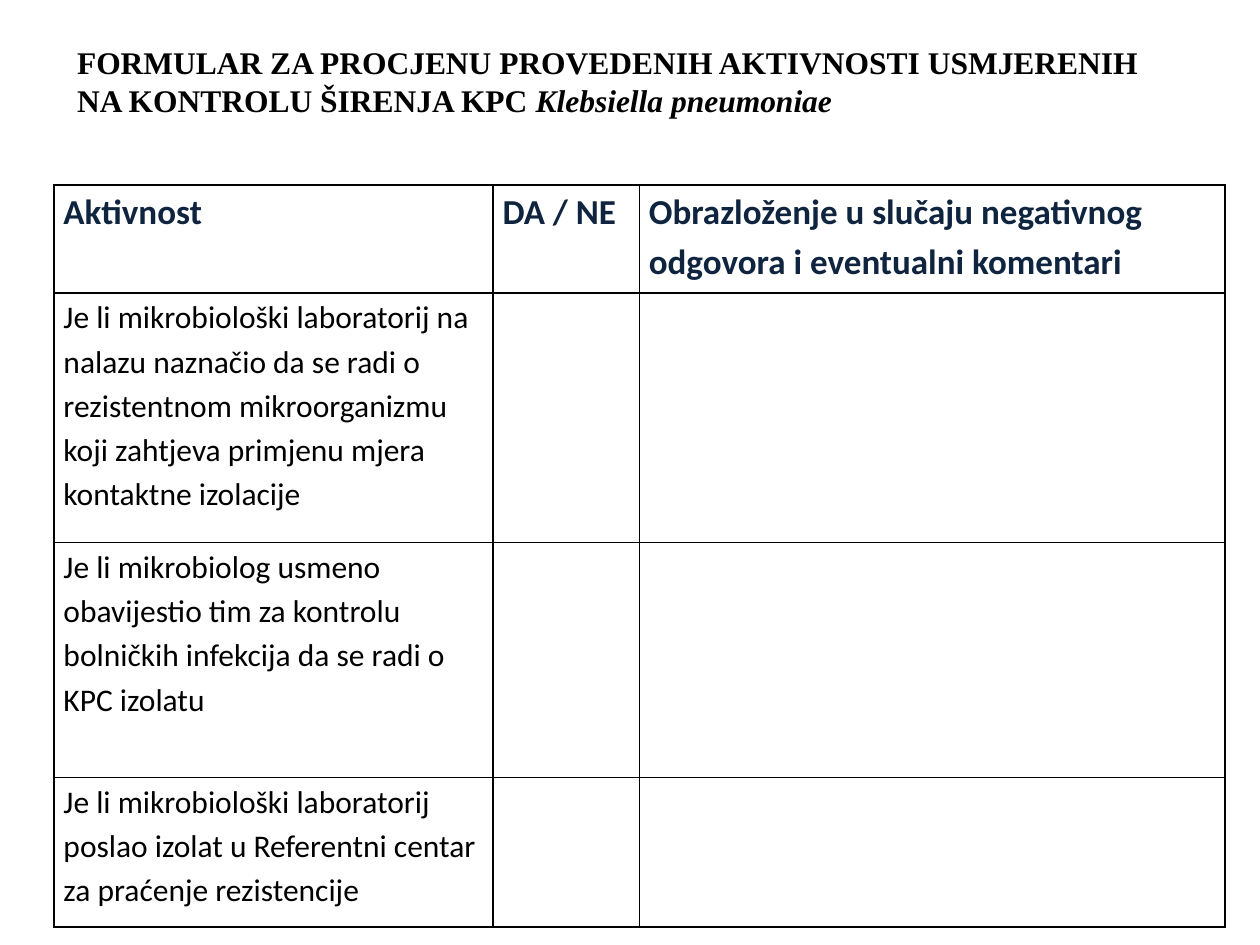
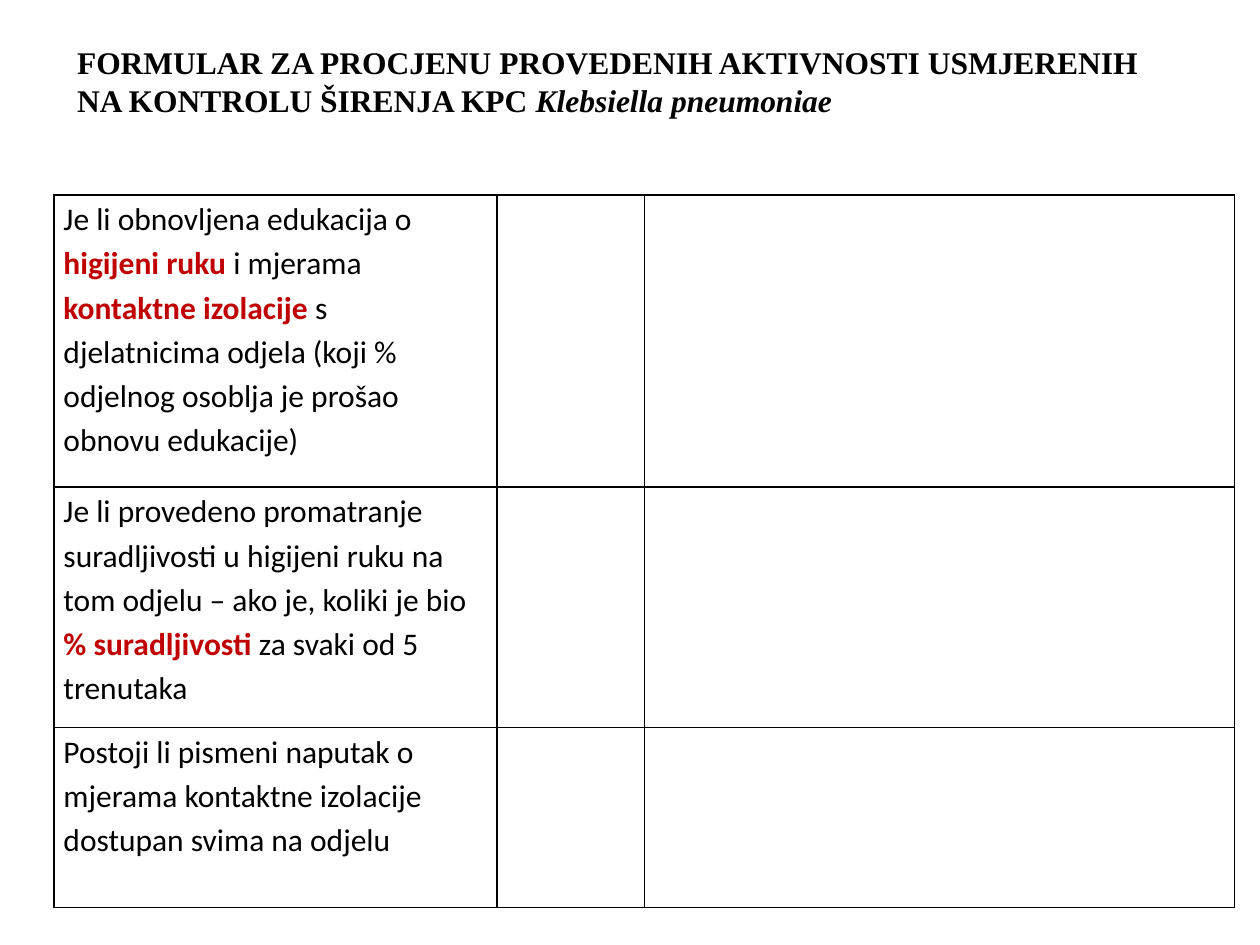
"""Build a two-slide form for assessing infection control measures."""
from lxml import etree
from pptx import Presentation
from pptx import util as u
from pptx.dml.color import RGBColor
from pptx.enum import text
from pptx.oxml import ns

BLACK = RGBColor(0x00, 0x00, 0x00)
NAVY = RGBColor(0x0F, 0x24, 0x3E)
RED = RGBColor(0xC0, 0x00, 0x00)

HEAD = ("Calibri", 20, NAVY, True, False)
BODY = ("Calibri", 18, BLACK, False, False)
KEY = ("Calibri", 18, RED, True, False)
NAME = ("Times New Roman", 18, BLACK, True, False)
LATIN = ("Times New Roman", 18, BLACK, True, True)

TITLE = [
    ("FORMULAR ZA PROCJENU PROVEDENIH AKTIVNOSTI USMJERENIH NA KONTROLU ŠIRENJA KPC ", NAME),
    ("Klebsiella pneumoniae", LATIN),
]
SHARES = (3 / 8, 1 / 8, 4 / 8)
FORMS = [
    {
        "top": 3.73, "width": 23.6,
        "rows": [
            (2.18, [
                [("Aktivnost", HEAD)],
                [("DA / NE", HEAD)],
                [("Obrazloženje u slučaju negativnog odgovora i eventualni komentari", HEAD)],
            ]),
            (5.03, [[("Je li mikrobiološki laboratorij na nalazu naznačio da se radi o "
                      "rezistentnom mikroorganizmu koji zahtjeva primjenu mjera "
                      "kontaktne izolacije", BODY)]]),
            (4.73, [[("Je li mikrobiolog usmeno obavijestio tim za kontrolu bolničkih "
                      "infekcija da se radi o KPC izolatu", BODY)]]),
            (3.02, [[("Je li mikrobiološki laboratorij poslao izolat u Referentni centar "
                      "za praćenje rezistencije", BODY)]]),
        ],
    },
    {
        "top": 3.93, "width": 23.8,
        "rows": [
            (5.89, [[
                ("Je li obnovljena edukacija o ", BODY),
                ("higijeni ruku ", KEY),
                ("i mjerama ", BODY),
                ("kontaktne izolacije ", KEY),
                ("s djelatnicima odjela (koji % odjelnog osoblja je prošao "
                 "obnovu edukacije)", BODY),
            ]]),
            (4.85, [[
                ("Je li provedeno promatranje suradljivosti u higijeni ruku na tom "
                 "odjelu – ako je, koliki je bio ", BODY),
                ("% suradljivosti ", KEY),
                ("za svaki od 5 trenutaka", BODY),
            ]]),
            (3.63, [[("Postoji li pismeni naputak o mjerama kontaktne izolacije "
                      "dostupan svima na odjelu", BODY)]]),
        ],
    },
]


def write(para, runs):
    for words, style in runs:
        run = para.add_run()
        run.text = words
        font = run.font
        font.name, size, font.color.rgb, font.bold, font.italic = style
        font.size = u.Pt(size)


def edge(cell):
    props = cell._tc.get_or_add_tcPr()
    for spot, side in enumerate(("lnL", "lnR", "lnT", "lnB")):
        line = etree.Element(ns.qn("a:" + side), w=str(u.Pt(1)))
        fill = etree.SubElement(line, ns.qn("a:solidFill"))
        etree.SubElement(fill, ns.qn("a:srgbClr"), val=str(BLACK))
        props.insert(spot, line)


def add_title(slide):
    title = slide.shapes.title
    title.left, title.top = u.Cm(1.3), u.Cm(0.74)
    title.width, title.height = u.Cm(22.2), u.Cm(2.24)
    frame = title.text_frame
    frame.auto_size = text.MSO_AUTO_SIZE.NONE
    frame.vertical_anchor = text.MSO_ANCHOR.TOP
    para = frame.paragraphs[0]
    para.alignment = text.PP_ALIGN.LEFT
    write(para, TITLE)


def add_form(slide, form):
    rows, width = form["rows"], form["width"]
    tall = sum(height for height, _ in rows)
    table = slide.shapes.add_table(
        len(rows), len(SHARES), u.Cm(1.09), u.Cm(form["top"]), u.Cm(width), u.Cm(tall)).table
    table.first_row = table.horz_banding = False
    for col, share in zip(table.columns, SHARES):
        col.width = u.Cm(width * share)
    for row, (height, parts) in zip(table.rows, rows):
        row.height = u.Cm(height)
        for cell in row.cells:
            cell.fill.background()
            cell.margin_left = cell.margin_right = u.Cm(0.19)
            cell.margin_top = cell.margin_bottom = 0
            edge(cell)
        for cell, runs in zip(row.cells, parts):
            para = cell.text_frame.paragraphs[0]
            para.line_spacing = 1.15
            para.space_after = u.Pt(10)
            write(para, runs)


def main():
    deck = Presentation()
    deck.slide_width, deck.slide_height = u.Cm(25.4), u.Cm(19.05)
    for form in FORMS:
        slide = deck.slides.add_slide(deck.slide_layouts[5])
        add_title(slide)
        add_form(slide, form)
    deck.save("out.pptx")


if __name__ == "__main__":
    main()
